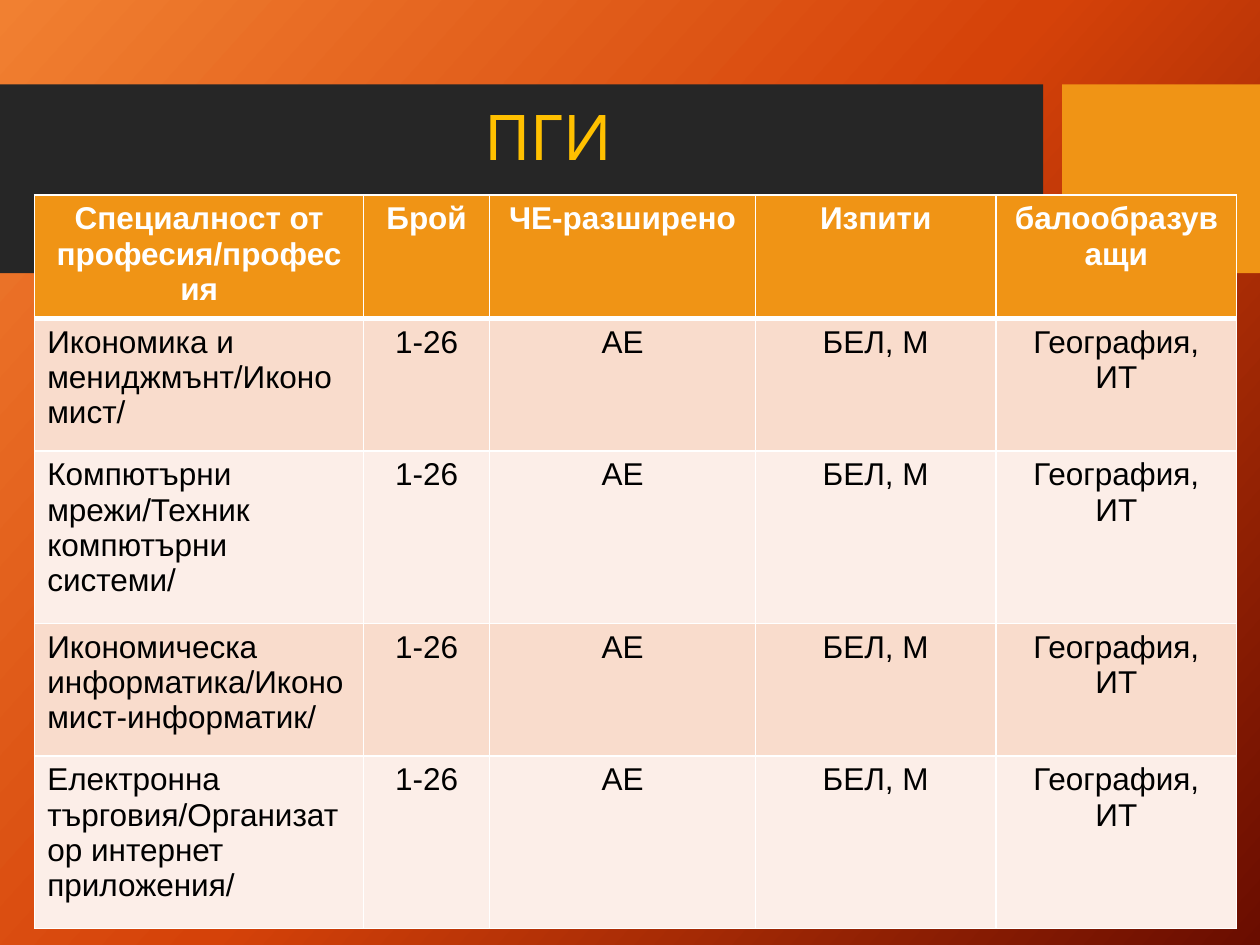
from copy import deepcopy
from lxml.etree import SubElement
from pptx import Presentation
from pptx.dml.color import RGBColor
from pptx.enum.shapes import MSO_SHAPE
from pptx.enum.text import MSO_ANCHOR, PP_ALIGN
from pptx.oxml.ns import qn
from pptx.util import Cm, Pt

ORANGE, WHITE = "F09415", "FFFFFF"
BANDS = ["F9DCCC", "FCEEE8"]
STOPS = [(0, "F18031"), (0.5, "D54209"), (1, "6A0D00")]
COLS = [6.63, 2.54, 5.36, 4.85, 4.85]
ROWS = [2.49, 2.67, 3.48, 2.67, 3.48]
HEAD = ["Специалност от професия/професия", "Брой", "ЧЕ-разширено",
        "Изпити", "балообразуващи"]
TRADES = ["Икономика и мениджмънт/Икономист/",
          "Компютърни мрежи/Техник компютърни системи/",
          "Икономическа информатика/Икономист-информатик/",
          "Електронна търговия/Организатор интернет приложения/"]
TERMS = ["1-26", "АЕ", "БЕЛ, М"]
SCORES = ["География, ИТ", "География,\nИТ", "География, ИТ", "География, ИТ"]


def paint(item, color):
    item.fill.solid()
    item.fill.fore_color.rgb = RGBColor.from_string(color)


def write(para, text, name, size, color, bold=False, align=PP_ALIGN.CENTER):
    para.alignment = align
    run = para.add_run()
    run.text = text
    font = run.font
    font.name, font.size, font.bold = name, Pt(size), bold
    font.color.rgb = RGBColor.from_string(color)


def backdrop(slide):
    fill = slide.background.fill
    fill.gradient()
    fill.gradient_angle = 360 - 42
    stops = slide.element.xpath(".//a:gsLst")[0]
    stops.append(deepcopy(stops[0]))
    for stop, (place, color) in zip(fill.gradient_stops, STOPS):
        stop.position = place
        stop.color.rgb = RGBColor.from_string(color)


def banner(slide, left, top, width, height):
    gap, tab = 0.38, 3.99
    main = width - gap - tab
    for x, wide, color in [(left, main, "262626"),
                           (left + main + gap, tab, ORANGE)]:
        panel = slide.shapes.add_shape(MSO_SHAPE.RECTANGLE, Cm(x), Cm(top),
                                       Cm(wide), Cm(height))
        panel.shadow.inherit = False
        paint(panel, color)
        panel.line.fill.background()


def heading(slide, text, left, top, width, height):
    title = slide.shapes.title
    title.left, title.top = Cm(left), Cm(top)
    title.width, title.height = Cm(width), Cm(height)
    slide.shapes.element.append(title.element)
    title.text_frame.vertical_anchor = MSO_ANCHOR.MIDDLE
    para = title.text_frame.paragraphs[0]
    para.line_spacing = 0.9
    write(para, text, "Cabin", 36, "FFC000")


def border(cell, top, bottom):
    props = cell._tc.get_or_add_tcPr()
    for side, width in [("L", 1), ("R", 1), ("T", top), ("B", bottom)]:
        line = SubElement(props, qn("a:ln" + side), w=str(Pt(width)))
        fill = SubElement(line, qn("a:solidFill"))
        SubElement(fill, qn("a:srgbClr"), val=WHITE)


def grid(slide, rows, left, top):
    table = slide.shapes.add_table(len(rows), len(COLS), Cm(left), Cm(top),
                                   Cm(sum(COLS)), Cm(sum(ROWS))).table
    for col, width in zip(table.columns, COLS):
        col.width = Cm(width)
    for r, (row, height) in enumerate(zip(rows, ROWS)):
        table.rows[r].height = Cm(height)
        head = r == 0
        for c, text in enumerate(row):
            cell = table.cell(r, c)
            border(cell, 3 if r == 1 else 1, 3 if head else 1)
            paint(cell, ORANGE if head else BANDS[(r - 1) % 2])
            align = PP_ALIGN.CENTER if head or c else PP_ALIGN.LEFT
            frame = cell.text_frame
            for i, part in enumerate(text.split("\n")):
                para = frame.add_paragraph() if i else frame.paragraphs[0]
                write(para, part, "Arial", 18, WHITE if head else "000000",
                      head, align)


def main():
    deck = Presentation()
    deck.slide_width, deck.slide_height = Cm(25.4), Cm(19.05)
    slide = deck.slides.add_slide(deck.slide_layouts[5])
    backdrop(slide)
    banner(slide, 0, 1.7, 25.4, 3.81)
    heading(slide, "ПГИ", 1.47, 0.53, 19.15, 4.57)
    body = [[trade, *TERMS, score] for trade, score in zip(TRADES, SCORES)]
    grid(slide, [HEAD, *body], 0.7, 3.93)
    deck.save("out.pptx")


if __name__ == "__main__":
    main()
